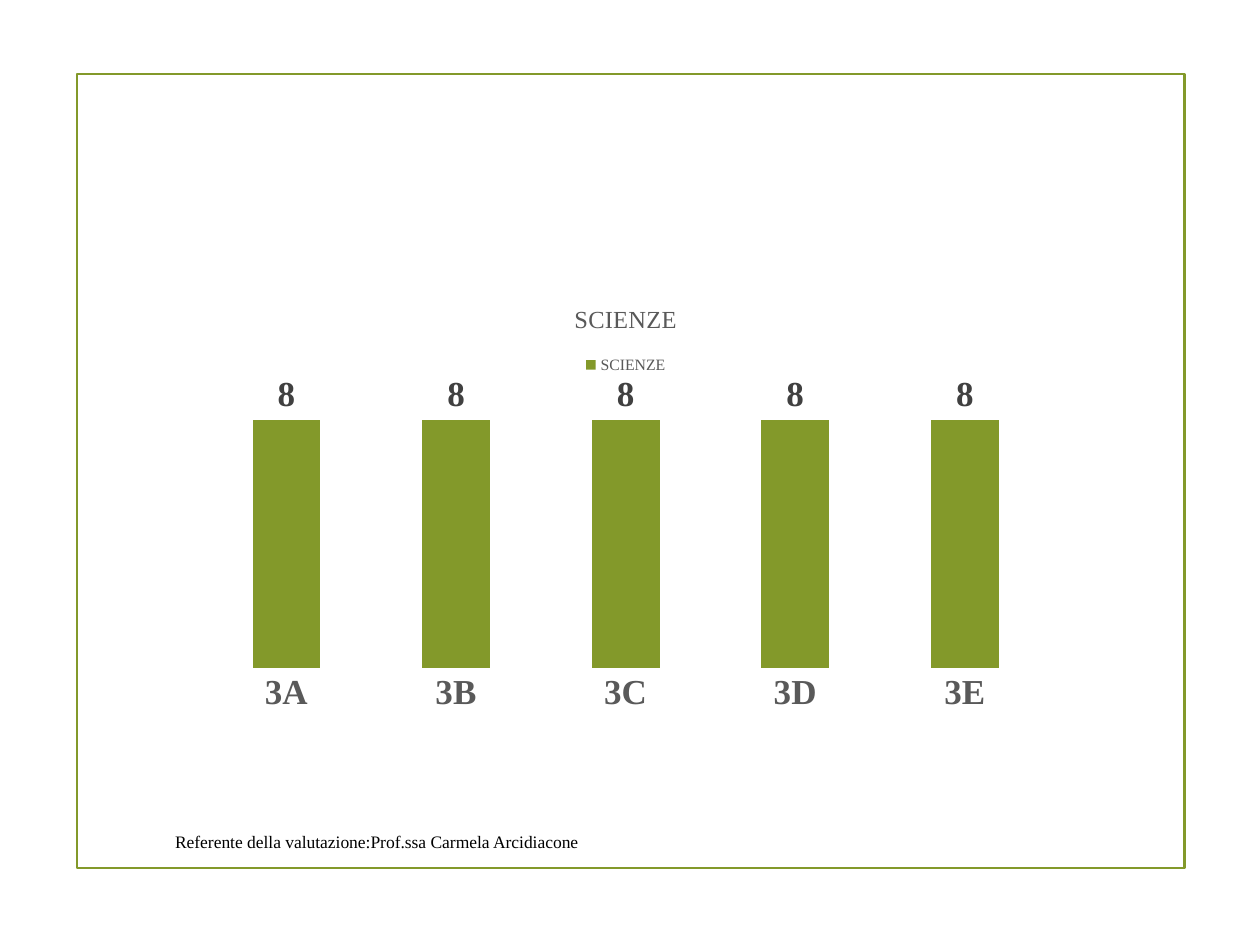
from lxml import etree
from pptx import Presentation
from pptx.chart import data
from pptx.dml.color import RGBColor
from pptx.enum import chart as ch, shapes, text
from pptx.oxml import ns
from pptx.util import Cm, Pt

FONT = "Times New Roman"
GREEN, GREY, DARK, BLACK = "83992A", "595959", "404040", "000000"


def colour(value):
    return RGBColor.from_string(value)


def style(font, size, value, bold=False):
    font.name, font.size, font.bold = FONT, Pt(size), bold
    font.color.rgb = colour(value)


def add_frame(page, left, top, width, height):
    frame = page.shapes.add_shape(shapes.MSO_SHAPE.RECTANGLE,
                                  Cm(left), Cm(top), Cm(width), Cm(height))
    frame.shadow.inherit = False
    frame.fill.background()
    frame.line.color.rgb = colour(GREEN)
    frame.line.width = Pt(1.25)


def add_footer(page, words, left, top, width, height):
    box = page.shapes.add_textbox(Cm(left), Cm(top), Cm(width), Cm(height))
    box.text_frame.word_wrap = True
    box.text_frame.vertical_anchor = text.MSO_ANCHOR.MIDDLE
    span = box.text_frame.paragraphs[0].add_run()
    span.text = words
    style(span.font, 10, BLACK)


def place_plot(chart, **fractions):
    """Fix the inner plot area as fractions of the chart."""
    area = chart.plots[0]._element.getparent()
    for old in area.findall(ns.qn("c:layout")):
        area.remove(old)
    layout = etree.Element(ns.qn("c:layout"))
    manual = etree.SubElement(layout, ns.qn("c:manualLayout"))
    settings = {"layoutTarget": "inner", "xMode": "edge", "yMode": "edge", **fractions}
    for name, value in settings.items():
        etree.SubElement(manual, ns.qn(f"c:{name}")).set("val", str(value))
    area.insert(0, layout)


def style_axes(chart):
    classes, marks = chart.category_axis, chart.value_axis
    classes.major_tick_mark = ch.XL_TICK_MARK.NONE
    classes.format.line.fill.background()
    style(classes.tick_labels.font, 20, GREY, True)
    marks.minimum_scale, marks.maximum_scale = 0, 9
    marks.has_major_gridlines = False
    marks.visible = False


def add_marks_chart(page, subject, marks, left, top, width, height):
    table = data.CategoryChartData(number_format="General")
    table.categories = list(marks)
    table.add_series(subject, list(marks.values()))
    chart = page.shapes.add_chart(ch.XL_CHART_TYPE.COLUMN_CLUSTERED, Cm(left), Cm(top),
                                  Cm(width), Cm(height), table).chart
    style(chart.font, 10, BLACK)

    chart.has_title = True
    span = chart.chart_title.text_frame.paragraphs[0].add_run()
    span.text = subject
    style(span.font, 14, GREY)

    chart.has_legend = True
    chart.legend.position = ch.XL_LEGEND_POSITION.TOP
    chart.legend.include_in_layout = False
    style(chart.legend.font, 9, GREY)

    style_axes(chart)
    plot = chart.plots[0]
    plot.gap_width = 150
    plot.vary_by_categories = False
    bars = plot.series[0]
    bars.format.fill.solid()
    bars.format.fill.fore_color.rgb = colour(GREEN)
    labels = bars.data_labels
    labels.show_value = True
    labels.position = ch.XL_LABEL_POSITION.OUTSIDE_END
    style(labels.font, 20, DARK, True)
    place_plot(chart, x=0.02, y=0.24, w=0.96, h=0.64)


def main():
    deck = Presentation()
    deck.slide_width, deck.slide_height = Cm(25.4), Cm(19.05)
    page = deck.slides.add_slide(deck.slide_layouts[6])
    add_frame(page, 1.55, 1.5, 22.33, 16)
    add_footer(page, "Referente della valutazione:Prof.ssa Carmela Arcidiacone",
               3.28, 16.56, 14.17, 0.79)
    marks = {f"3{section}": 8 for section in "ABCDE"}
    add_marks_chart(page, "SCIENZE", marks, 3.71, 5.72, 17.81, 8.81)
    deck.save("out.pptx")


if __name__ == "__main__":
    main()
